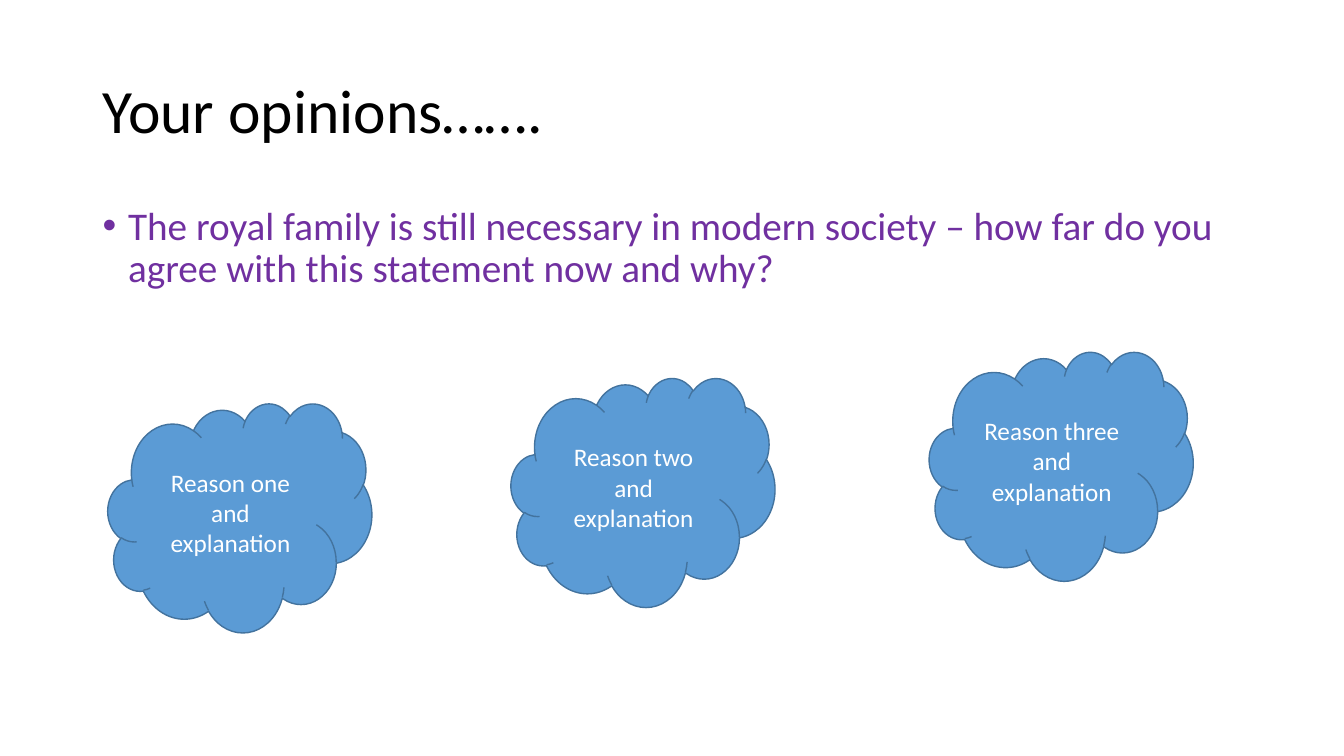
"""Build a slide that asks for opinions, with three reason clouds."""
from dataclasses import dataclass

from lxml import etree
from pptx import Presentation
from pptx.dml.color import RGBColor
from pptx.enum.shapes import MSO_SHAPE
from pptx.enum.text import MSO_ANCHOR, PP_ALIGN
from pptx.oxml.ns import qn
from pptx.slide import Slide
from pptx.text.text import TextFrame, _Paragraph
from pptx.util import Cm, Pt

CLOUD = MSO_SHAPE.CLOUD
MIDDLE = MSO_ANCHOR.MIDDLE
TOP = MSO_ANCHOR.TOP
CENTER = PP_ALIGN.CENTER
FONT = "Calibri"
LEFT, WIDTH = 2.34, 29.21
CLOUD_W, CLOUD_H = 6.65, 5.77


@dataclass
class Reason:
    name: str
    left: float
    top: float


REASONS = [
    Reason("one", 2.72, 10.16),
    Reason("two", 12.88, 9.52),
    Reason("three", 23.42, 8.86),
]


def color(code: str) -> RGBColor:
    return RGBColor.from_string(code)


def write(frame: TextFrame, text: str, size: int, code: str, anchor: MSO_ANCHOR) -> _Paragraph:
    frame.word_wrap = True
    frame.vertical_anchor = anchor
    frame.text = text
    para = frame.paragraphs[0]
    for run in para.runs:
        run.font.name = FONT
        run.font.size = Pt(size)
        run.font.color.rgb = color(code)
    return para


def add_text(slide: Slide, top: float, height: float, text: str, size: int,
             code: str, anchor: MSO_ANCHOR) -> _Paragraph:
    box = slide.shapes.add_textbox(Cm(LEFT), Cm(top), Cm(WIDTH), Cm(height))
    para = write(box.text_frame, text, size, code, anchor)
    para.line_spacing = 0.9
    return para


def add_bullet(para: _Paragraph, indent: float) -> None:
    props = para._p.get_or_add_pPr()
    props.set("marL", str(Cm(indent)))
    props.set("indent", str(-Cm(indent)))
    etree.SubElement(props, qn("a:buFont"), typeface="Arial")
    etree.SubElement(props, qn("a:buChar"), char="•")


def add_cloud(slide: Slide, reason: Reason) -> None:
    cloud = slide.shapes.add_shape(
        CLOUD, Cm(reason.left), Cm(reason.top), Cm(CLOUD_W), Cm(CLOUD_H))
    cloud.shadow.inherit = False
    cloud.fill.solid()
    cloud.fill.fore_color.rgb = color("5B9BD5")
    cloud.line.color.rgb = color("43739E")
    cloud.line.width = Pt(1)
    text = f"Reason {reason.name} and explanation"
    para = write(cloud.text_frame, text, 18, "FFFFFF", MIDDLE)
    para.alignment = CENTER


def main() -> None:
    deck = Presentation()
    deck.slide_width, deck.slide_height = Cm(33.87), Cm(19.05)
    slide = deck.slides.add_slide(deck.slide_layouts[6])
    add_text(slide, 1.01, 3.68, "Your opinions…….", 44, "000000", MIDDLE)
    claim = add_text(
        slide, 5.07, 12.09,
        "The royal family is still necessary in modern society – "
        "how far do you agree with this statement now and why?",
        28, "7030A0", TOP)
    claim.space_before = Pt(10)
    add_bullet(claim, 0.64)
    for reason in REASONS:
        add_cloud(slide, reason)
    deck.save("out.pptx")


if __name__ == "__main__":
    main()
